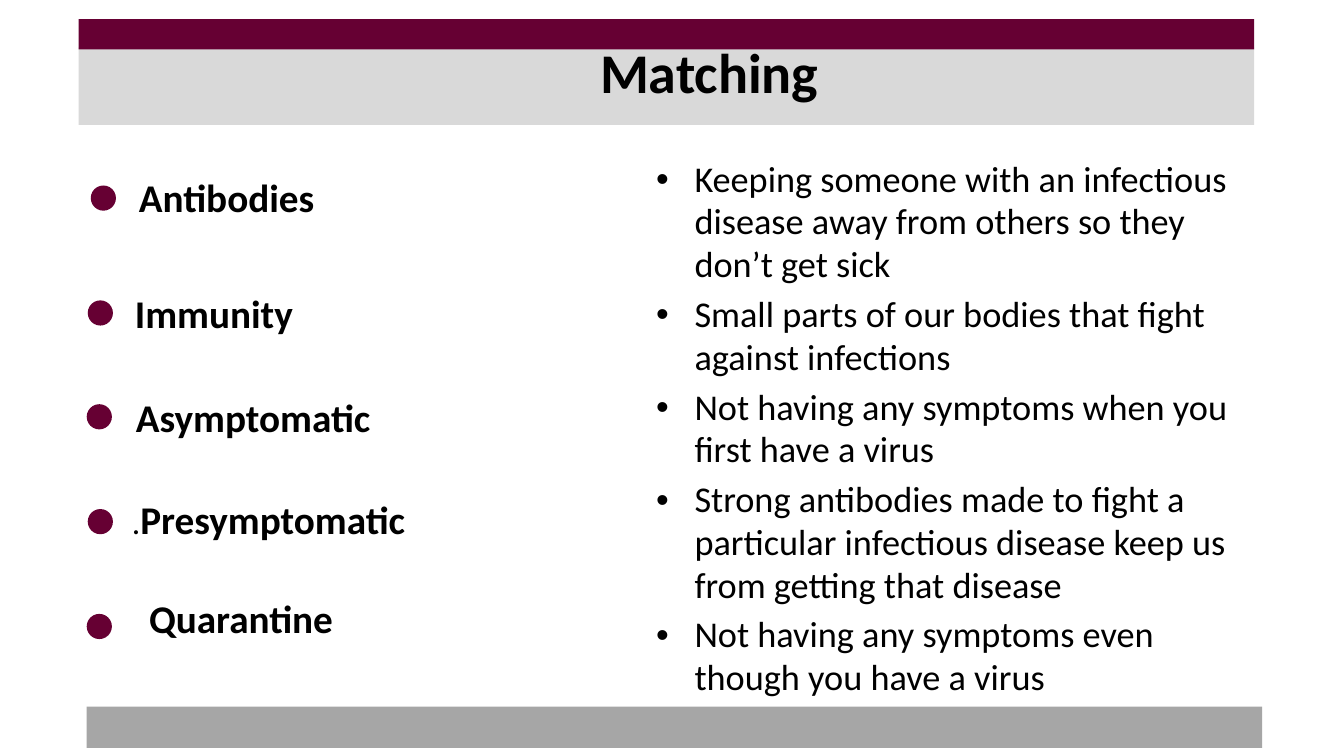
from typing import NamedTuple

from lxml.etree import SubElement
from pptx import Presentation
from pptx.dml.color import RGBColor
from pptx.enum.shapes import MSO_SHAPE as Shape
from pptx.enum.text import PP_ALIGN as Align
from pptx.oxml.ns import qn
from pptx.util import Pt

PX = 9144  # 100 px to the inch
FONT = "Calibri"
BLACK = RGBColor(0x00, 0x00, 0x00)
MAROON = RGBColor(0x66, 0x00, 0x33)
LIGHT_GRAY = RGBColor(0xD9, 0xD9, 0xD9)
MID_GRAY = RGBColor(0xA6, 0xA6, 0xA6)
DOT_SIZE = 25
HANGING_INDENT = 38


class Box(NamedTuple):
    left: int
    top: int
    width: int
    height: int


class Run(NamedTuple):
    text: str
    size: float
    bold: bool = False


class Term(NamedTuple):
    runs: list[Run]
    box: Box
    dot_left: int
    dot_top: int
    wrap: bool = True


BANDS = [
    (Box(78, 47, 1166, 77), LIGHT_GRAY),
    (Box(86, 701, 1166, 41), MID_GRAY),
    (Box(78, 19, 1166, 30), MAROON),
]
TERMS = [
    Term([Run("Antibodies", 28, True)], Box(128, 167, 528, 57), 90, 184),
    Term([Run("Immunity", 28, True)], Box(124, 282, 517, 57), 87, 298),
    Term([Run("Asymptomatic", 28, True)], Box(125, 385, 516, 57), 86, 401),
    Term([Run(".", 24), Run("Presymptomatic", 28, True)],
         Box(121, 486, 1131, 57), 87, 505),
    Term([Run("Quarantine", 28, True)], Box(138, 585, 205, 57), 86, 609, wrap=False),
]
DEFINITIONS = [
    "Keeping someone with an infectious disease away from others so they don’t get sick",
    "Small parts of our bodies that fight against infections",
    "Not having any symptoms when you first have a virus",
    "Strong antibodies made to fight a particular infectious disease keep us from getting that disease",
    "Not having any symptoms even though you have a virus",
]


def emu(box: Box) -> list[int]:
    return [length * PX for length in box]


def add_filled(slide, kind: Shape, box: Box, color: RGBColor) -> None:
    shape = slide.shapes.add_shape(kind, *emu(box))
    shape.shadow.inherit = False
    shape.fill.solid()
    shape.fill.fore_color.rgb = color
    shape.line.fill.background()


def add_bullet(paragraph) -> None:
    properties = paragraph._p.get_or_add_pPr()
    properties.set("marL", str(HANGING_INDENT * PX))
    properties.set("indent", str(-HANGING_INDENT * PX))
    SubElement(properties, qn("a:buFont"), typeface="Arial")
    SubElement(properties, qn("a:buChar"), char="•")


def add_text(slide, box: Box, paragraphs: list[list[Run]], *,
             align: Align = Align.LEFT, wrap: bool = True, bulleted: bool = False) -> None:
    """Each paragraph is a list of runs; bulleted ones get list spacing."""
    frame = slide.shapes.add_textbox(*emu(box)).text_frame
    frame.word_wrap = wrap
    for index, runs in enumerate(paragraphs):
        paragraph = frame.add_paragraph() if index else frame.paragraphs[0]
        paragraph.alignment = align
        if bulleted:
            paragraph.line_spacing = 0.98
            paragraph.space_before = Pt(5.2)
            add_bullet(paragraph)
        for item in runs:
            run = paragraph.add_run()
            run.text = item.text
            run.font.name = FONT
            run.font.size = Pt(item.size)
            run.font.bold = item.bold
            run.font.color.rgb = BLACK


def main() -> None:
    presentation = Presentation()
    presentation.slide_width = 1333 * PX
    presentation.slide_height = 750 * PX
    slide = presentation.slides.add_slide(presentation.slide_layouts[6])

    for box, color in BANDS:
        add_filled(slide, Shape.RECTANGLE, box, color)
    add_text(slide, Box(191, 32, 1025, 149), [[Run("Matching", 40, True)]],
             align=Align.CENTER)
    add_text(slide, Box(641, 152, 625, 518),
             [[Run(definition, 25.9)] for definition in DEFINITIONS], bulleted=True)
    for term in TERMS:
        dot = Box(term.dot_left, term.dot_top, DOT_SIZE, DOT_SIZE)
        add_filled(slide, Shape.OVAL, dot, MAROON)
        add_text(slide, term.box, [term.runs], wrap=term.wrap)

    presentation.save("out.pptx")


if __name__ == "__main__":
    main()
